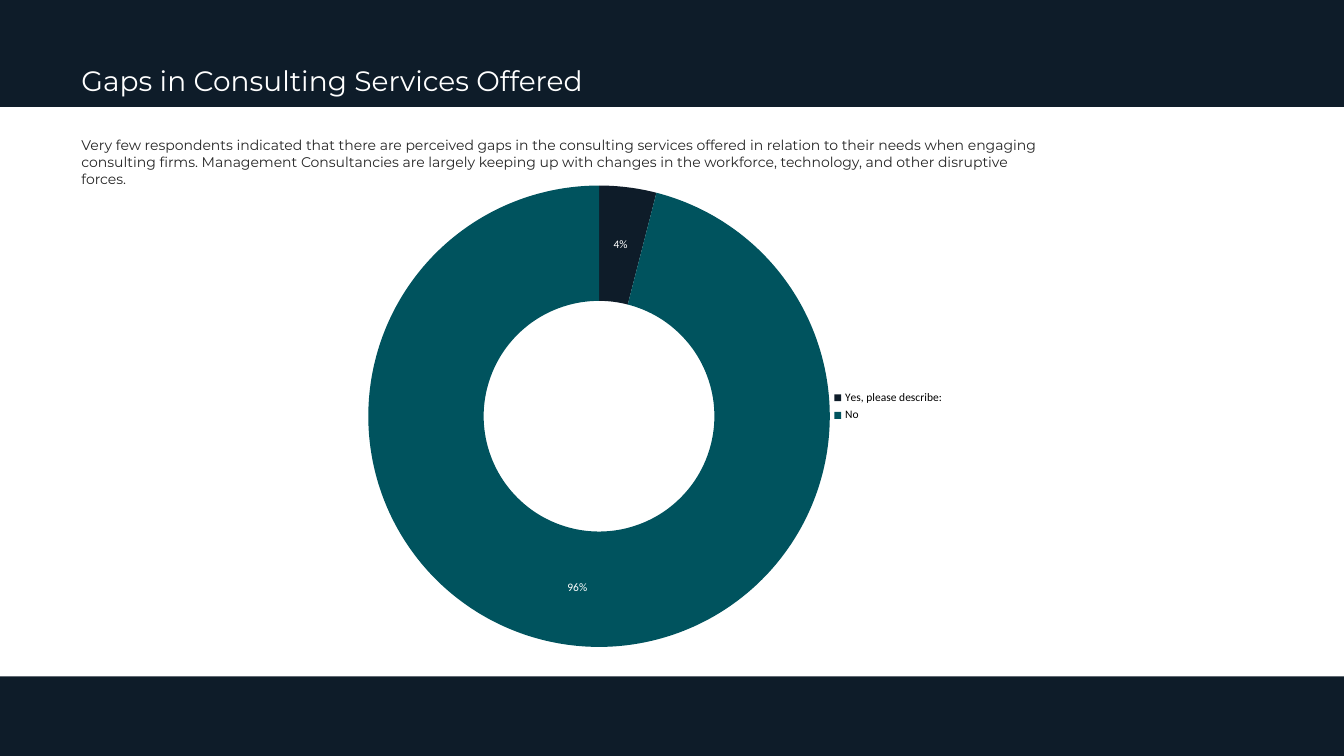
from pptx import Presentation
from pptx.chart.data import CategoryChartData
from pptx.dml.color import RGBColor
from pptx.enum.chart import XL_CHART_TYPE as ChartType, XL_LEGEND_POSITION as LegendPosition
from pptx.enum.shapes import MSO_SHAPE as Shape
from pptx.oxml import parse_xml
from pptx.oxml.ns import nsdecls, qn
from pptx.util import Inches, Pt

NAVY = RGBColor(0x0E, 0x1C, 0x29)
TEAL = RGBColor(0x00, 0x53, 0x5E)
WHITE = RGBColor(0xFF, 0xFF, 0xFF)
BLACK = RGBColor(0x00, 0x00, 0x00)
CHARCOAL = RGBColor(0x26, 0x26, 0x26)

TITLE = "Gaps in Consulting Services Offered"
SUMMARY = (
    "Very few respondents indicated that there are perceived gaps in the consulting "
    "services offered in relation to their needs when engaging consulting firms. "
    "Management Consultancies are largely keeping up with changes in the workforce, "
    "technology, and other disruptive forces."
)
ANSWERS = [("Yes, please describe:", 0.04, NAVY), ("No", 0.96, TEAL)]


def add_band(slide, top, height):
    """Add a full-width navy band."""
    band = slide.shapes.add_shape(
        Shape.RECTANGLE, 0, Inches(top), Inches(13.33), Inches(height))
    band.shadow.inherit = False
    band.fill.solid()
    band.fill.fore_color.rgb = NAVY
    band.line.fill.background()


def add_text(slide, box, wording, size, color, line_spacing=1.0):
    """Add a wrapped text box with one paragraph."""
    frame = slide.shapes.add_textbox(*map(Inches, box)).text_frame
    frame.word_wrap = True
    paragraph = frame.paragraphs[0]
    paragraph.line_spacing = line_spacing
    run = paragraph.add_run()
    run.text = wording
    run.font.name = "Montserrat"
    run.font.size = Pt(size)
    run.font.color.rgb = color


def make_layout(target="", **fractions):
    """Return a manual chart layout given in fractions of the chart area."""
    inner = f'<c:layoutTarget val="{target}"/>' if target else ""
    modes = "".join(f'<c:{axis}Mode val="edge"/>' for axis in "xy")
    places = "".join(f'<c:{key} val="{value}"/>' for key, value in fractions.items())
    return parse_xml(
        f'<c:layout {nsdecls("c")}><c:manualLayout>{inner}{modes}{places}'
        "</c:manualLayout></c:layout>")


def set_font(font, color):
    """Apply the chart typeface and size in a colour."""
    font.name = "Calibri"
    font.size = Pt(8.2)
    font.color.rgb = color


def place_parts(chart):
    """Fix the ring and the legend in place."""
    area = chart.element.find(qn("c:chart")).find(qn("c:plotArea"))
    legend = area.getparent().find(qn("c:legend"))
    for part in (area, legend):
        for layout in part.findall(qn("c:layout")):
            part.remove(layout)
    area.insert(0, make_layout("inner", x=0.273, y=0.029, w=0.357, h=0.942))
    legend.find(qn("c:legendPos")).addnext(make_layout(x=0.63, y=0.44))


def add_answer_ring(slide, box):
    """Add the doughnut of yes and no answers."""
    data = CategoryChartData(number_format="0%")
    data.categories = [answer for answer, _, _ in ANSWERS]
    data.add_series("Series 1", [share for _, share, _ in ANSWERS])
    chart = slide.shapes.add_chart(ChartType.DOUGHNUT, *map(Inches, box), data).chart
    chart.has_title = False
    set_font(chart.font, BLACK)
    chart.has_legend = True
    chart.legend.position = LegendPosition.RIGHT
    chart.legend.include_in_layout = False
    set_font(chart.legend.font, BLACK)
    ring = chart.plots[0]
    ring.vary_by_categories = True
    for index, (_, _, color) in enumerate(ANSWERS):
        slice_format = ring.series[0].points[index].format
        slice_format.fill.solid()
        slice_format.fill.fore_color.rgb = color
        slice_format.line.fill.background()
    ring.has_data_labels = True
    labels = ring.data_labels
    labels.show_value = True
    labels.show_percentage = False
    labels.number_format = "0%"
    labels.number_format_is_linked = False
    set_font(labels.font, WHITE)
    place_parts(chart)


def main():
    """Build and save the slide."""
    deck = Presentation()
    deck.slide_width, deck.slide_height = Inches(13.33), Inches(7.5)
    slide = deck.slides.add_slide(deck.slide_layouts[6])
    add_band(slide, 6.71, 0.79)
    add_band(slide, 0, 1.06)
    add_text(slide, (0.71, 0.62, 9.64, 0.56), TITLE, 20, WHITE, 0.9)
    add_text(slide, (0.71, 1.31, 9.85, 0.44), SUMMARY, 10, CHARCOAL)
    add_answer_ring(slide, (0.14, 1.7, 12.85, 4.86))
    deck.save("out.pptx")


if __name__ == "__main__":
    main()
